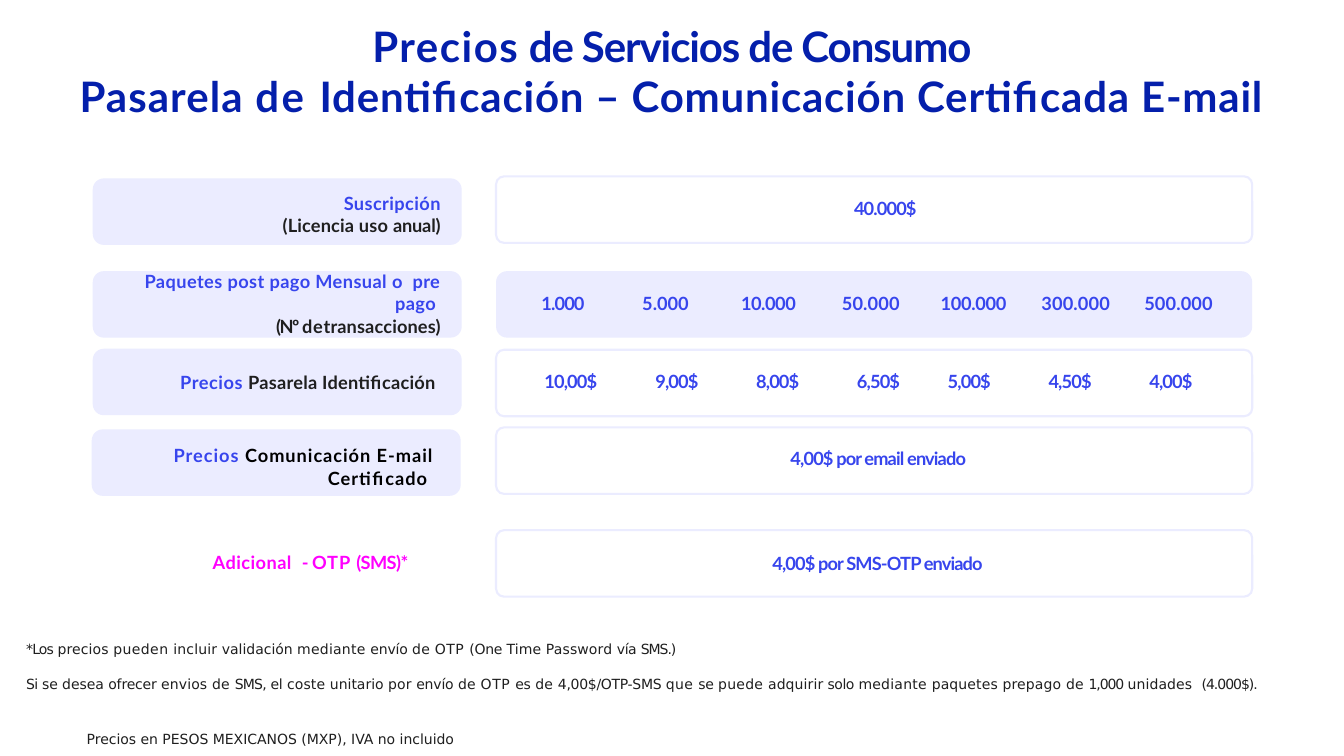
from pptx import Presentation
from pptx.dml.color import RGBColor
from pptx.enum.shapes import MSO_SHAPE
from pptx.enum.text import MSO_ANCHOR, PP_ALIGN
from pptx.oxml.ns import qn
from pptx.util import Inches, Pt
from lxml import etree

LEFT, CENTER, RIGHT = PP_ALIGN.LEFT, PP_ALIGN.CENTER, PP_ALIGN.RIGHT
TOP = MSO_ANCHOR.TOP
ROUNDED = MSO_SHAPE.ROUNDED_RECTANGLE

NAVY, BLUE, LAVENDER = "041FAB", "3745ED", "EBECFF"
INK, BLACK, MAGENTA = "1F1F1F", "000000", "FF00FF"
NO_STYLE_NO_GRID = "{2D5ABB26-0587-4C30-8999-92F81FD0307C}"

TITLE = [
    [("Precios", NAVY, 1.1), (" de Servicios de Consumo", NAVY, -0.8)],
    [("Pasarela ", NAVY, 0.8), ("de ", NAVY, 1.8),
     ("Identificación – Comunicación Certificada E-mail", NAVY, 0.6)],
]

BOX_HEIGHT = 0.66
LABEL_BOXES = [(0.92, 1.77), (0.92, 2.69), (0.92, 3.46), (0.91, 4.26)]
VALUE_BOX_TOPS = [1.75, 3.47, 4.24, 5.26]
PACKAGE_BOX_TOP = 2.69

LABELS = [
    (2.5, 1.9, 1.87, 0.46, 0, [
        [("Suscripción", BLUE, 0.3)],
        [("(Licencia ", INK, 0.1), ("uso ", INK, 0.2), ("anual)", INK, -0.1)]]),
    (1.17, 2.67, 3.2, 0.68, 0.9, [
        [("Paquetes post pago Mensual o  pre pago ", BLUE, 0.3)],
        [("(Nº ", INK, -1.1), ("de", INK, 0.5), ("transacciones)", INK, 0.1)]]),
    (1.17, 3.67, 3.15, 0.24, 0, [
        [("Precios ", BLUE, 0.4), ("Pasarela Identificación", INK, 0.2)]]),
    (1.17, 4.4, 3.12, 0.46, 0.9, [
        [("Precios ", BLUE, 0.7), ("Comunicación E-mail", BLACK, 0.7)],
        [("Certificado ", BLACK, 0.7)]]),
]

VALUES = [
    (8.47, 1.95, 1.01, [("40.000$", BLUE, -0.6)]),
    (7.84, 4.43, 3.42, [("4,00$ por email enviado", BLUE, -0.6)]),
    (7.66, 5.47, 2.52, [("4,00$ por SMS-OTP enviado", BLUE, -0.6)]),
    (2.11, 5.46, 2.19, [("Adicional  ", MAGENTA, 0.33), ("- ", MAGENTA, -0.7),
                        ("OTP ", MAGENTA, 0.7), ("(SMS)*", MAGENTA, -0.4)]),
]

PACKAGES = [
    ("1.000", -0.6, 0.88, 0.14), ("5.000", 0, 1.01, 0.26),
    ("10.000", -0.3, 1.03, 0.23), ("50.000", 0.1, 1.01, 0.2),
    ("100.000", -0.2, 1.03, 0.17), ("300.000", 0.1, 1.03, 0.14),
    ("500.000", 0.1, 1.03, 0.13),
]

PRICES = ["10,00$", "9,00$", "8,00$", "6,50$", "5,00$", "4,50$", "4,00$"]
PRICE_TABS = [1.1, 2.1, 3.1, 4, 5, 6]

NOTES = [
    [("*Los ", -0.6), ("precios ", 0.1), ("pueden ", 0.3), ("incluir ", 0.1),
     ("validación ", 0), ("mediante ", 0.2), ("envío ", -0.1), ("de ", 0.2),
     ("OTP ", 0.4), ("(One ", -0.2), ("Time Password ", 0.1), ("vía ", -0.3),
     ("SMS.)", -0.7)],
    [("Si ", -0.4), ("se ", -0.1), ("desea ", 0), ("ofrecer ", -0.1),
     ("envios ", 0.1), ("de ", 0.2), ("SMS, ", -0.5), ("el ", -0.1),
     ("coste ", 0.1), ("unitario ", 0), ("por ", 0.1), ("envío ", -0.1),
     ("de ", 0.2), ("OTP ", 0.4), ("es ", -0.1), ("de ", 0.2),
     ("4,00$/OTP-SMS ", -0.2), ("que ", 0.3), ("se ", -0.1), ("puede ", 0.2),
     ("adquirir", 0.1), (" solo ", -0.3), ("mediante ", 0.2),
     ("paquetes prepago ", 0.1), ("de ", 0.2), ("1,000 ", -0.8),
     ("unidades  ", 0.1), ("(4.000$).", -0.7)],
]
CURRENCY_NOTE = "Precios en PESOS MEXICANOS (MXP), IVA no incluido"


def color(hex_string):
    return RGBColor.from_string(hex_string)


def add_runs(paragraph, runs, size=13, font_name="Lato", bold=True):
    for text, hex_string, spacing in runs:
        run = paragraph.add_run()
        run.text = text
        run.font.size = Pt(size)
        run.font.name = font_name
        run.font.bold = bold
        run.font.color.rgb = color(hex_string)
        run._r.get_or_add_rPr().set("spc", str(round(spacing * 100)))


def prepare_frame(frame):
    frame.word_wrap = True
    frame.vertical_anchor = TOP
    frame.margin_left = frame.margin_right = frame.margin_bottom = 0
    frame.margin_top = Inches(0.01)


def add_text(slide, left, top, width, height, lines, align=LEFT, gap=0, **style):
    box = slide.shapes.add_textbox(Inches(left), Inches(top), Inches(width), Inches(height))
    prepare_frame(box.text_frame)
    for index, runs in enumerate(lines):
        paragraph = box.text_frame.paragraphs[0]
        if index:
            paragraph = box.text_frame.add_paragraph()
            paragraph.space_before = Pt(gap)
        paragraph.alignment = align
        add_runs(paragraph, runs, **style)
    return box


def add_box(slide, left, top, width, radius, filled):
    shape = slide.shapes.add_shape(
        ROUNDED, Inches(left), Inches(top), Inches(width), Inches(BOX_HEIGHT))
    shape.adjustments[0] = radius / BOX_HEIGHT
    shape.shadow.inherit = False
    if filled:
        shape.fill.solid()
        shape.fill.fore_color.rgb = color(LAVENDER)
        shape.line.fill.background()
    else:
        shape.fill.background()
        shape.line.color.rgb = color(LAVENDER)
        shape.line.width = Pt(1.5)


def add_title(slide):
    title = slide.shapes.title
    title.left, title.top = Inches(0), Inches(0.19)
    title.width, title.height = Inches(13.33), Inches(1.02)
    prepare_frame(title.text_frame)
    paragraph = title.text_frame.paragraphs[0]
    paragraph.alignment = CENTER
    paragraph.line_spacing = 1.0
    for index, runs in enumerate(TITLE):
        if index:
            paragraph.add_line_break()
        add_runs(paragraph, runs, size=30)


def add_packages(slide):
    total = sum(width for _, _, width, _ in PACKAGES)
    frame = slide.shapes.add_table(
        1, len(PACKAGES), Inches(5.23), Inches(2.91), Inches(total), Inches(0.22))
    table = frame.table
    table.first_row = table.horz_banding = False
    table._tbl.tblPr.find(qn("a:tableStyleId")).text = NO_STYLE_NO_GRID
    table.rows[0].height = Inches(0.22)
    for index, (text, spacing, width, indent) in enumerate(PACKAGES):
        table.columns[index].width = Inches(width)
        cell = table.cell(0, index)
        cell.fill.background()
        cell.margin_left = Inches(indent)
        cell.margin_right = cell.margin_top = cell.margin_bottom = 0
        paragraph = cell.text_frame.paragraphs[0]
        paragraph.line_spacing = Pt(14.8)
        add_runs(paragraph, [(text, BLUE, spacing)])


def add_prices(slide):
    box = add_text(slide, 5.4, 3.66, 6.8, 0.23, [[("\t".join(PRICES), BLUE, -0.6)]])
    properties = box.text_frame.paragraphs[0]._p.get_or_add_pPr()
    tabs = etree.SubElement(properties, qn("a:tabLst"))
    for position in PRICE_TABS:
        etree.SubElement(tabs, qn("a:tab"), pos=str(Inches(position)), algn="l")


def main():
    presentation = Presentation()
    presentation.slide_width, presentation.slide_height = Inches(13.33), Inches(7.5)
    slide = presentation.slides.add_slide(presentation.slide_layouts[5])
    add_title(slide)
    for left, top in LABEL_BOXES:
        add_box(slide, left, top, 3.66, 0.11, True)
    for top in VALUE_BOX_TOPS:
        add_box(slide, 4.92, top, 7.5, 0.08, False)
    add_box(slide, 4.92, PACKAGE_BOX_TOP, 7.5, 0.11, True)
    for left, top, width, height, gap, lines in LABELS:
        add_text(slide, left, top, width, height, lines, RIGHT, gap)
    for left, top, width, runs in VALUES:
        add_text(slide, left, top, width, 0.23, [runs])
    add_packages(slide)
    add_prices(slide)
    note_style = {"size": 10, "font_name": "DejaVu Sans", "bold": False}
    notes = [[(text, INK, spacing) for text, spacing in runs] for runs in NOTES]
    add_text(slide, 0.26, 6.34, 12.46, 0.53, notes, gap=13.4, **note_style)
    add_text(slide, 0.86, 7.24, 6.05, 0.2, [[(CURRENCY_NOTE, INK, 0)]], **note_style)
    presentation.save("out.pptx")


if __name__ == "__main__":
    main()
